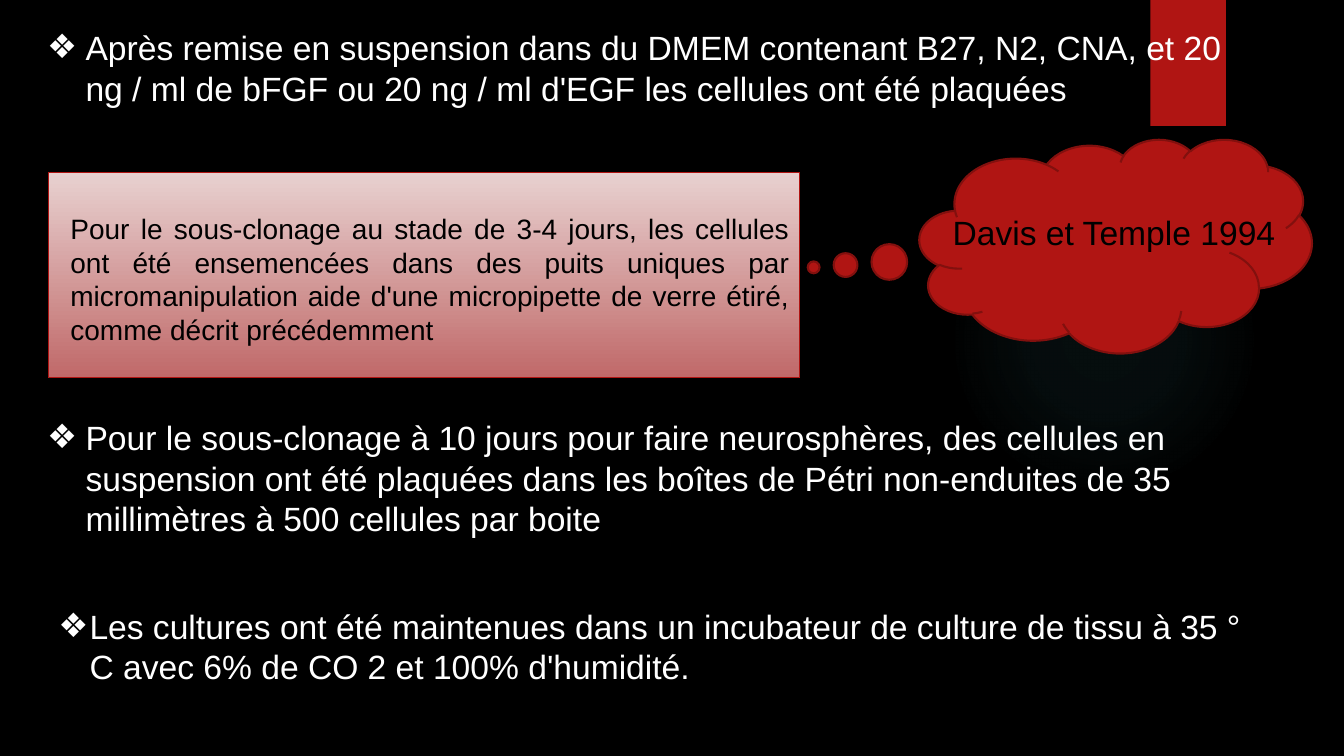
from lxml.etree import SubElement
from pptx import Presentation
from pptx.dml.color import RGBColor
from pptx.enum.shapes import MSO_SHAPE
from pptx.enum.text import MSO_AUTO_SIZE, PP_ALIGN
from pptx.oxml import parse_xml
from pptx.oxml.ns import nsdecls, qn
from pptx.util import Inches, Pt

RED = "B01513"
BLACK = "000000"
WHITE = "FFFFFF"
RADIAL = ('<a:path path="circle"><a:fillToRect l="50000" t="50000" '
          'r="50000" b="50000"/></a:path>')
DOWN = '<a:lin ang="5400000" scaled="0"/>'


def paint(color, value):
    """Set a colour format from a hex string."""
    color.rgb = RGBColor.from_string(value)


def add_form(slide, kind, box, fill=None, line=None, width=1):
    """Add a preset shape with a plain fill and an optional outline."""
    form = slide.shapes.add_shape(kind, *map(Inches, box))
    form.shadow.inherit = False
    if fill:
        form.fill.solid()
        paint(form.fill.fore_color, fill)
    else:
        form.fill.background()
    if line:
        paint(form.line.color, line)
        form.line.width = Pt(width)
    else:
        form.line.fill.background()
    return form


def set_grad(form, stops, course):
    """Replace an empty fill by a gradient of (place, colour, opacity) stops."""
    marks = "".join(
        f'<a:gs pos="{place * 1000}"><a:srgbClr val="{color}">'
        f'<a:alpha val="{alpha * 1000}"/></a:srgbClr></a:gs>'
        for place, color, alpha in stops)
    props = form.element.spPr
    grad = parse_xml(f'<a:gradFill {nsdecls("a")} rotWithShape="1">'
                     f'<a:gsLst>{marks}</a:gsLst>{course}</a:gradFill>')
    props.replace(props.find(qn("a:noFill")), grad)


def add_text(slide, box, text, size, color, align=None, indent=0, wrap=True):
    """Add a text box, with a diamond bullet if an indent is given."""
    frame = slide.shapes.add_textbox(*map(Inches, box)).text_frame
    frame.word_wrap = wrap
    frame.auto_size = MSO_AUTO_SIZE.SHAPE_TO_FIT_TEXT
    frame.text = text
    para = frame.paragraphs[0]
    para.alignment = align
    if indent:
        props = para._p.get_or_add_pPr()
        props.set("marL", str(Inches(indent)))
        props.set("indent", str(-Inches(indent)))
        SubElement(props, qn("a:buFont"), typeface="Arial")
        SubElement(props, qn("a:buChar"), char="❖")
    font = para.runs[0].font
    font.name = "Arial"
    font.size = Pt(size)
    paint(font.color, color)


def main():
    """Build the slide and save it."""
    deck = Presentation()
    deck.slide_width, deck.slide_height = Inches(13.33), Inches(7.5)
    slide = deck.slides.add_slide(deck.slide_layouts[6])
    slide.background.fill.solid()
    paint(slide.background.fill.fore_color, BLACK)

    glow = add_form(slide, MSO_SHAPE.OVAL, (9.41, 1.83, 3.08, 3.08))
    set_grad(glow, [(0, "50B9C1", 7), (36, "50B9C1", 6), (69, "50B9C1", 0)],
             RADIAL)
    add_form(slide, MSO_SHAPE.RECTANGLE, (11.41, 0, 0.75, 1.25), RED)
    cloud = add_form(slide, MSO_SHAPE.CLOUD_CALLOUT, (9.12, 1.38, 3.89, 2.12),
                     RED, "82100E", 1.5)
    cloud.adjustments[0], cloud.adjustments[1] = -0.77, 0.1
    panel = add_form(slide, MSO_SHAPE.RECTANGLE, (0.48, 1.71, 7.45, 2.04),
                     line=RED, width=0.75)
    set_grad(panel, [(0, "E8D1D0", 100), (100, "C06969", 100)], DOWN)

    add_text(slide, (0.6, 2.05, 7.33, 1.45),
             "Pour le sous-clonage au stade de 3-4 jours, les cellules ont été "
             "ensemencées dans des puits uniques par micromanipulation aide "
             "d'une micropipette de verre étiré, comme décrit précédemment",
             20, BLACK, align=PP_ALIGN.JUSTIFY)
    add_text(slide, (9.35, 2.05, 3.44, 0.5), "Davis et Temple 1994", 24, BLACK,
             wrap=False)
    points = [
        ((0.37, 0.22, 12.15, 0.91), 0.38,
         "Après remise en suspension dans du DMEM contenant B27, N2, CNA, et "
         "20 ng / ml de bFGF ou 20 ng / ml d'EGF les cellules ont été "
         "plaquées"),
        ((0.37, 4.09, 12.41, 1.31), 0.38,
         "Pour le sous-clonage à 10 jours pour faire neurosphères, des "
         "cellules en suspension ont été plaquées dans les boîtes de Pétri "
         "non-enduites de 35 millimètres à 500 cellules par boite"),
        ((0.48, 5.96, 12.04, 0.91), 0.31,
         "Les cultures ont été maintenues dans un incubateur de culture de "
         "tissu à 35 ° C avec 6% de CO 2 et 100% d'humidité."),
    ]
    for box, indent, text in points:
        add_text(slide, box, text, 24, WHITE, indent=indent)
    deck.save("out.pptx")


if __name__ == "__main__":
    main()
